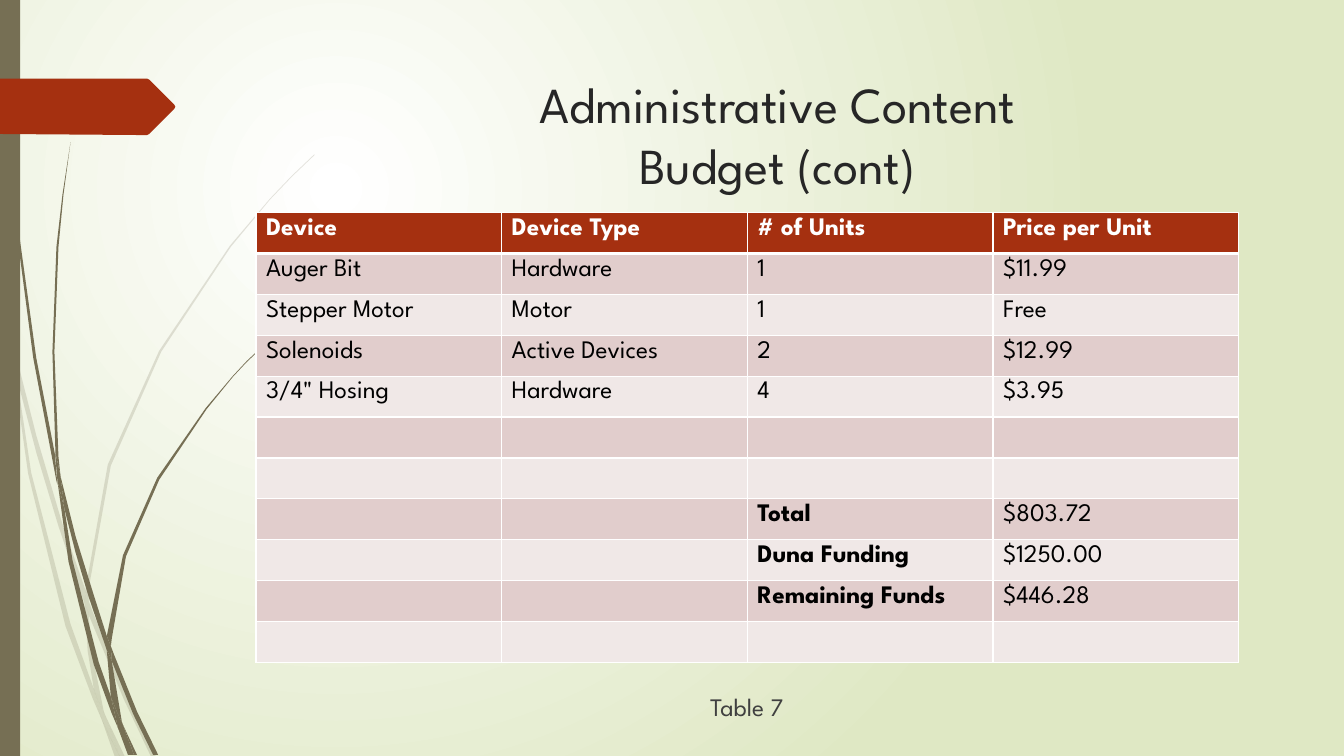
from pptx import Presentation
from pptx.dml.color import RGBColor
from pptx.enum.shapes import MSO_SHAPE
from pptx.enum.text import MSO_ANCHOR, PP_ALIGN
from pptx.oxml import parse_xml
from pptx.oxml.ns import nsdecls, qn
from pptx.util import Cm, Pt

# Content
TITLE = "Administrative Content\vBudget (cont)"
CAPTION = "Table 7"
BUDGET = [
    ("Device", "Device Type", "# of Units", "Price per Unit"),
    ("Auger Bit", "Hardware", "1", "$11.99"),
    ("Stepper Motor", "Motor", "1", "Free"),
    ("Solenoids", "Active Devices", "2", "$12.99"),
    ('3/4" Hosing', "Hardware", "4", "$3.95"),
    ("", "", "", ""),
    ("", "", "", ""),
    ("", "", "Total", "$803.72"),
    ("", "", "Duna Funding", "$1250.00"),
    ("", "", "Remaining Funds", "$446.28"),
    ("", "", "", ""),
]
SUMMARY_LABELS = {"Total", "Duna Funding", "Remaining Funds"}

THEME = {
    "font": "League Spartan",
    "title_size": 36, "text_size": 18,
    "title": "262626", "caption": "404040", "cell": "000000",
    "accent": "A53010", "on_accent": "FFFFFF",
    "bands": ("E1CDCC", "F0E8E7"), "rule": "FFFFFF",
    "grass": "766F54", "glow": "FFFFFF", "edge": "DFE8C4",
}

# Outlines in hundredths of an inch
OUTLINE_UNIT = Cm(0.0254)
PALE_GRASS = [
    [(11, 350), (9, 322), (0, 282), (0, 299), (10, 344)],
    [(58, 522), (84, 599), (85, 586), (62, 520), (36, 432), (14, 345), (17, 376), (36, 449)],
    [(92, 607), (88, 596), (88, 610), (123, 694), (150, 751), (155, 751), (127, 692)],
    [(119, 751), (124, 751), (105, 711)],
    [(93, 683), (70, 619), (31, 469), (17, 376), (11, 350), (28, 470), (65, 621),
     (92, 693), (101, 714), (99, 707)],
    [(84, 599), (87, 646), (93, 683), (96, 692), (105, 711), (103, 706), (91, 646),
     (88, 610), (88, 608)],
    [(88, 584), (110, 462), (160, 349), (229, 245), (268, 198), (290, 175), (312, 154),
     (312, 153), (289, 175), (268, 197), (228, 244), (158, 348), (107, 461), (85, 584),
     (85, 586), (88, 596)],
    [(101, 714), (114, 751), (119, 751)],
    [(88, 608), (88, 610), (88, 596), (85, 586), (84, 599)],
    [(96, 692), (93, 683), (99, 707), (101, 714), (119, 751), (105, 711)],
]
DARK_GRASS = [
    [(7, 110), (17, 233), (33, 355), (56, 477), (57, 481), (55, 457), (55, 453),
     (36, 355), (19, 232), (8, 109), (5, 48), (4, 0), (3, 0), (4, 48)],
    [(88, 592), (106, 645), (106, 633), (106, 631), (93, 590), (75, 532), (60, 472),
     (64, 505), (75, 548)],
    [(113, 649), (110, 641), (111, 656), (132, 708), (152, 749), (157, 749), (136, 706)],
    [(110, 691), (98, 657), (72, 556), (64, 505), (57, 477), (68, 557), (93, 659),
     (111, 708), (117, 722), (116, 717)],
    [(60, 472), (58, 453), (54, 349), (58, 245), (63, 193), (70, 141), (62, 193),
     (56, 245), (52, 349), (55, 449)],
    [(133, 749), (136, 749), (122, 719)],
    [(57, 477), (64, 505), (60, 472), (55, 449), (55, 453)],
    [(111, 633), (125, 552), (158, 476), (205, 406), (231, 374), (245, 359), (261, 344),
     (260, 344), (245, 358), (231, 373), (204, 405), (156, 474), (122, 551), (106, 631),
     (110, 641)],
    [(117, 722), (127, 749), (131, 749)],
    [(106, 645), (110, 691), (116, 706), (122, 719), (121, 716), (111, 656), (109, 651)],
    [(106, 645), (109, 651), (111, 656), (110, 641), (106, 631), (106, 633)],
    [(116, 706), (110, 691), (116, 717), (117, 722), (130, 749), (133, 749), (122, 719)],
]
PENNANT = [(0, 78), (146, 78), (148, 79), (173, 104), (174, 106), (173, 108),
           (148, 133), (146, 134), (136, 134), (0, 133)]


def paint(shape, color, opacity=100):
    shape.shadow.inherit = False
    shape.fill.solid()
    shape.fill.fore_color.rgb = RGBColor.from_string(color)
    shape.line.fill.background()
    if opacity < 100:
        tint = shape.element.spPr.find(f"{qn('a:solidFill')}/{qn('a:srgbClr')}")
        tint.append(parse_xml(f'<a:alpha {nsdecls("a")} val="{opacity * 1000}"/>'))


def draw_outline(shapes, points, color, opacity=100):
    builder = shapes.build_freeform(*points[0], scale=OUTLINE_UNIT)
    builder.add_line_segments(points[1:], close=True)
    paint(builder.convert_to_shape(), color, opacity)


def style_text(paragraph, size, color, bold=False):
    for run in paragraph.runs:
        run.font.name = THEME["font"]
        run.font.size = Pt(size)
        run.font.bold = bold
        run.font.color.rgb = RGBColor.from_string(color)


def add_label(slide, text, left, top, width, height, size, color):
    frame = slide.shapes.add_textbox(Cm(left), Cm(top), Cm(width), Cm(height)).text_frame
    frame.word_wrap = True
    frame.vertical_anchor = MSO_ANCHOR.TOP
    paragraph = frame.paragraphs[0]
    paragraph.text = text
    paragraph.alignment = PP_ALIGN.CENTER
    style_text(paragraph, size, color)


def rule_cell(cell, widths):
    properties = cell._tc.get_or_add_tcPr()
    for position, (side, width) in enumerate(widths.items()):
        properties.insert(position, parse_xml(
            f'<a:ln{side} {nsdecls("a")} w="{Pt(width)}"><a:solidFill>'
            f'<a:srgbClr val="{THEME["rule"]}"/></a:solidFill></a:ln{side}>'))


def add_background(slide):
    fill = slide.background.fill
    fill.gradient()
    for stop, color in zip(fill.gradient_stops, (THEME["glow"], THEME["edge"])):
        stop.color.rgb = RGBColor.from_string(color)
    gradient = slide.element.find(f".//{qn('a:gradFill')}")
    linear = gradient.find(qn("a:lin"))
    gradient.replace(linear, parse_xml(
        f'<a:path {nsdecls("a")} path="circle">'
        '<a:fillToRect l="50000" t="50000" r="100000" b="100000"/></a:path>'))


def add_decoration(slide):
    for blades, opacity in ((PALE_GRASS, 20), (DARK_GRASS, 100)):
        tuft = slide.shapes.add_group_shape()
        for blade in blades:
            draw_outline(tuft.shapes, blade, THEME["grass"], opacity)
    side_bar = slide.shapes.add_shape(MSO_SHAPE.RECTANGLE, 0, 0, Cm(0.51), Cm(19.05))
    paint(side_bar, THEME["grass"])
    draw_outline(slide.shapes, PENNANT, THEME["accent"])


def add_budget(slide):
    budget = slide.shapes.add_table(len(BUDGET), len(BUDGET[0]), Cm(6.45), Cm(5.36),
                                    Cm(24.77), Cm(11.33)).table
    for r, entries in enumerate(BUDGET):
        header = r == 0
        background = THEME["accent"] if header else THEME["bands"][(r - 1) % 2]
        color = THEME["on_accent"] if header else THEME["cell"]
        widths = {"L": 1, "R": 1, "T": 3 if r == 1 else 1, "B": 3 if header else 1}
        for c, entry in enumerate(entries):
            cell = budget.cell(r, c)
            cell.fill.solid()
            cell.fill.fore_color.rgb = RGBColor.from_string(background)
            rule_cell(cell, widths)
            if entry:
                cell.text_frame.text = entry
                style_text(cell.text_frame.paragraphs[0], THEME["text_size"], color,
                           bold=header or entry in SUMMARY_LABELS)


def main():
    deck = Presentation()
    deck.slide_width, deck.slide_height = Cm(33.87), Cm(19.05)
    slide = deck.slides.add_slide(deck.slide_layouts[6])
    add_background(slide)
    add_decoration(slide)
    add_label(slide, TITLE, 7.21, 1.73, 24.77, 3.56, THEME["title_size"], THEME["title"])
    add_budget(slide)
    add_label(slide, CAPTION, 15.01, 17.3, 7.62, 1.02, THEME["text_size"], THEME["caption"])
    deck.save("out.pptx")


if __name__ == "__main__":
    main()
